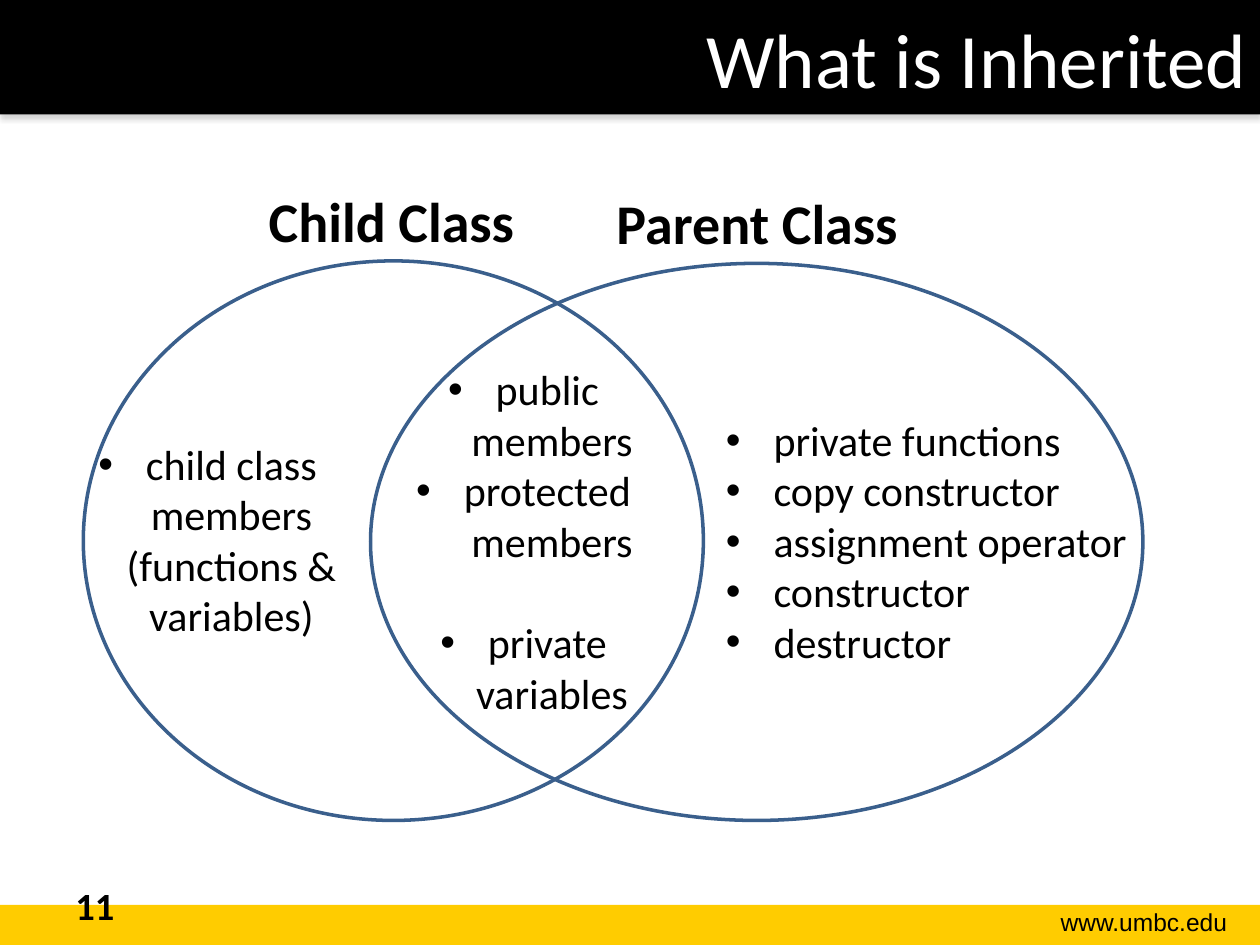
from lxml import etree
from pptx import Presentation
from pptx.dml.color import RGBColor
from pptx.enum.shapes import MSO_SHAPE
from pptx.enum.text import MSO_ANCHOR, MSO_AUTO_SIZE, PP_ALIGN
from pptx.oxml import parse_xml
from pptx.oxml.ns import nsdecls, qn
from pptx.util import Cm, Pt

BLACK = RGBColor(0x00, 0x00, 0x00)
WHITE = RGBColor(0xFF, 0xFF, 0xFF)
GOLD = RGBColor(0xFF, 0xCC, 0x00)
OUTLINE_BLUE = RGBColor(0x3A, 0x5F, 0x8C)

# Text formats
TITLE = {"size": Pt(44), "name": "Calibri", "bold": False, "color": WHITE}
HEADING = {"size": Pt(32), "name": "Calibri", "bold": True, "color": BLACK}
LIST = {"size": Pt(24), "name": "Calibri", "bold": False, "color": BLACK}
PAGE_NUMBER = {"size": Pt(22), "name": "Calibri", "bold": True, "color": BLACK}
ADDRESS = {"size": Pt(14), "name": "Arial", "bold": False, "color": BLACK}

LIST_INDENT = Cm(0.96)
BLANK_LINE = Pt(29.3)

CHILD_ITEMS = ["child class\nmembers\n(functions &\nvariables)"]
SHARED_ITEMS = ["public \nmembers", "protected \nmembers", "private \nvariables"]
PARENT_ITEMS = ["private functions", "copy constructor", "assignment operator",
                "constructor", "destructor"]


def place(shape, left, top, width, height):
    """Move and size a shape, in centimetres."""
    position = {"left": left, "top": top, "width": width, "height": height}
    for name, value in position.items():
        setattr(shape, name, Cm(value))


def add_bullet(paragraph):
    properties = paragraph._p.get_or_add_pPr()
    properties.set("marL", str(LIST_INDENT))
    properties.set("indent", str(-LIST_INDENT))
    etree.SubElement(properties, qn("a:buFont")).set("typeface", "Arial")
    etree.SubElement(properties, qn("a:buChar")).set("char", "•")


def write_text(shape, items, text_format, alignment=PP_ALIGN.LEFT, bullets=False):
    """Fill a text box or placeholder with one paragraph per item."""
    frame = shape.text_frame
    settings = {"word_wrap": True, "auto_size": MSO_AUTO_SIZE.NONE,
                "vertical_anchor": MSO_ANCHOR.TOP}
    for name, value in settings.items():
        setattr(frame, name, value)
    for index, item in enumerate(items):
        paragraph = frame.add_paragraph() if index else frame.paragraphs[0]
        paragraph.text = item
        if bullets:
            add_bullet(paragraph)
        paragraph.alignment = alignment
        paragraph.space_before = Pt(0)
        for run in paragraph.runs:
            for name, value in text_format.items():
                if name == "color":
                    run.font.color.rgb = value
                else:
                    setattr(run.font, name, value)


def add_text(slide, box, *text, **options):
    shape = slide.shapes.add_textbox(*map(Cm, box))
    write_text(shape, *text, **options)


def fill_placeholder(slide, index, box, *text, **options):
    shape = slide.placeholders[index]
    place(shape, *box)
    write_text(shape, *text, **options)
    return shape


def add_band(slide, top, height, color):
    """Add a full-width band behind everything else."""
    band = slide.shapes.add_shape(MSO_SHAPE.RECTANGLE, 0, Cm(top), Cm(25.4), Cm(height))
    band.shadow.inherit = False
    band.fill.solid()
    band.fill.fore_color.rgb = color
    band.line.fill.background()
    slide.shapes.element.insert(2, band.element)
    return band


def add_band_shadow(band):
    effects = band.element.spPr.find(qn("a:effectLst"))
    effects.append(parse_xml(
        f'<a:outerShdw {nsdecls("a")} blurRad="{Pt(3.1)}" dist="{Pt(1.8)}" '
        'dir="5400000" rotWithShape="0"><a:srgbClr val="808080">'
        '<a:alpha val="35000"/></a:srgbClr></a:outerShdw>'))


def add_circle(slide, box):
    circle = slide.shapes.add_shape(MSO_SHAPE.OVAL, *map(Cm, box))
    circle.shadow.inherit = False
    circle.fill.background()
    circle.line.color.rgb = OUTLINE_BLUE
    circle.line.width = Pt(2)


def main():
    presentation = Presentation()
    presentation.slide_width, presentation.slide_height = Cm(25.4), Cm(19.05)
    slide = presentation.slides.add_slide(presentation.slide_layouts.get_by_name("Comparison"))

    # Header and footer
    add_band_shadow(add_band(slide, 0, 2.31, BLACK))
    add_band(slide, 18.24, 0.81, GOLD)
    title = fill_placeholder(slide, 0, (2.54, 0, 22.86, 3.18),
                             ["What is Inherited"], TITLE, PP_ALIGN.RIGHT)
    title.text_frame.margin_top = Cm(0.23)
    add_text(slide, (19.94, 18.16, 5.05, 0.86), ["www.umbc.edu"], ADDRESS, PP_ALIGN.RIGHT)
    add_text(slide, (1.27, 17.65, 5.92, 1.02), ["11"], PAGE_NUMBER)

    # Overlapping classes
    add_circle(slide, (7.47, 5.31, 15.57, 11.23))
    add_circle(slide, (1.68, 5.26, 12.5, 11.28))

    # Class headings
    fill_placeholder(slide, 1, (4.62, 3.63, 6.55, 1.63),
                     ["Child Class"], HEADING, PP_ALIGN.CENTER)
    fill_placeholder(slide, 3, (11.99, 3.68, 6.55, 1.63),
                     ["Parent Class"], HEADING, PP_ALIGN.CENTER)

    # Member lists
    fill_placeholder(slide, 2, (0.91, 8.71, 6.55, 4.37),
                     CHILD_ITEMS, LIST, PP_ALIGN.CENTER, bullets=True)
    fill_placeholder(slide, 4, (14.38, 8.23, 9.73, 5.38),
                     PARENT_ITEMS, LIST, bullets=True)
    shared = slide.shapes.add_textbox(Cm(6.32), Cm(7.21), Cm(8.66), Cm(7.44))
    write_text(shared, SHARED_ITEMS, LIST, PP_ALIGN.CENTER, bullets=True)
    shared.text_frame.paragraphs[-1].space_before = BLANK_LINE

    presentation.save("out.pptx")


if __name__ == "__main__":
    main()
